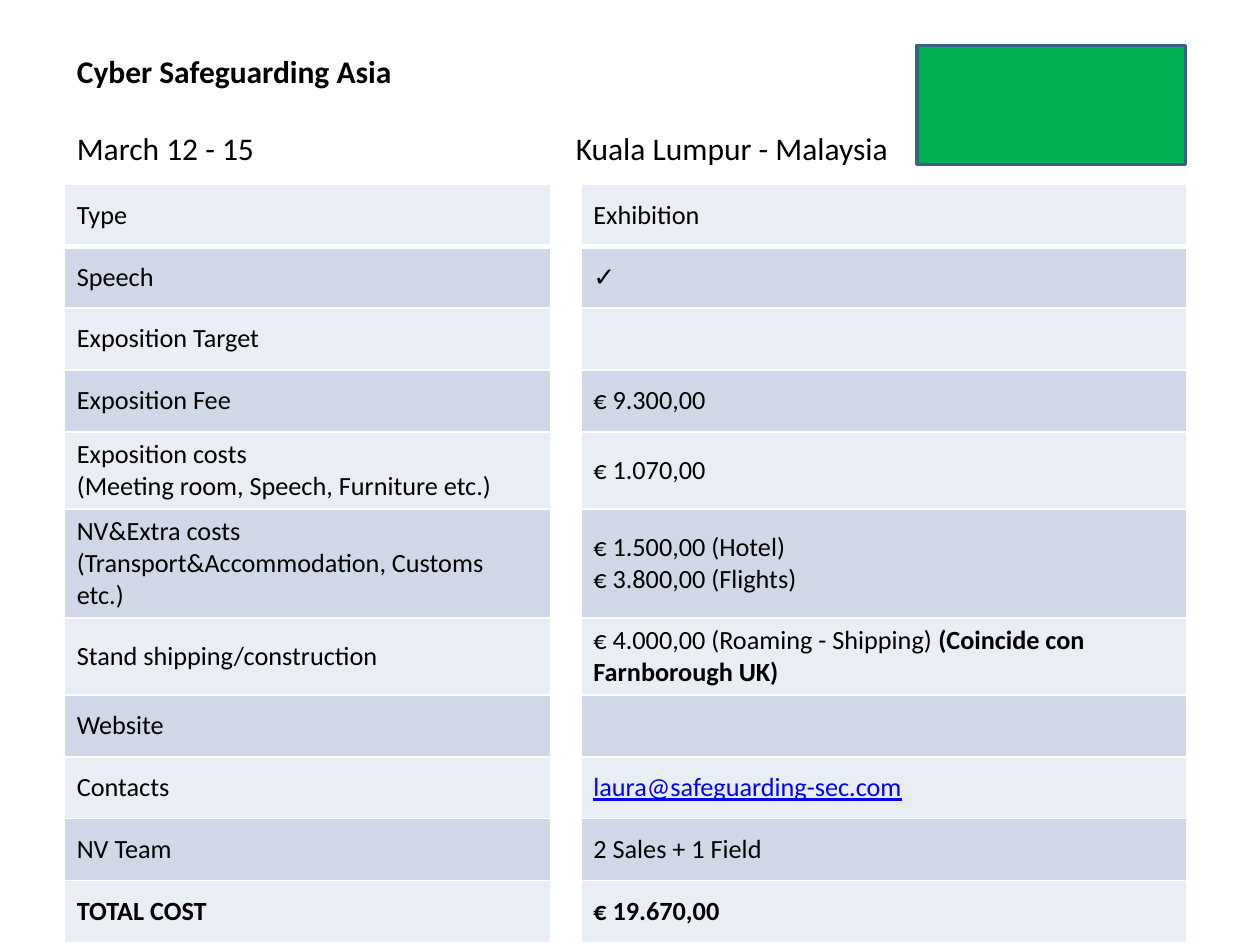
from lxml.etree import SubElement
from pptx import Presentation
from pptx.dml.color import RGBColor as Rgb
from pptx.enum.shapes import MSO_SHAPE as Shape
from pptx.enum.text import MSO_ANCHOR as Anchor, MSO_AUTO_SIZE as AutoSize, PP_ALIGN as Align
from pptx.oxml.ns import qn
from pptx.util import Inches, Pt

COLORS = {"text": "000000", "link": "0000FF", "gap": "FFFFFF", "light": "E9EDF4",
          "dark": "D0D8E8", "status": "00B050", "outline": "3A5F8C"}
BUDGET = [
    ("Type", "Exhibition"),
    ("Speech", "✓"),
    ("Exposition Target", ""),
    ("Exposition Fee", "€ 9.300,00"),
    ("Exposition costs\n(Meeting room, Speech, Furniture etc.)", "€ 1.070,00"),
    ("NV&Extra costs\n(Transport&Accommodation, Customs etc.)",
     "€ 1.500,00 (Hotel)\n€ 3.800,00 (Flights)"),
    ("Stand shipping/construction", "€ 4.000,00 (Roaming - Shipping) "),
    ("Website", ""),
    ("Contacts", "laura@safeguarding-sec.com"),
    ("NV Team", "2 Sales + 1 Field"),
    ("TOTAL COST", "€ 19.670,00"),
]


class EventSlide:
    """Holds the style and the current slide, placing elements by shares of its size."""

    def __init__(self, deck, font="Calibri"):
        self.deck, self.font = deck, font
        self.slide = deck.slides.add_slide(deck.slide_layouts[5])

    def place(self, left, top, width, height):
        across, down = self.deck.slide_width, self.deck.slide_height
        return int(left * across), int(top * down), int(width * across), int(height * down)

    def style(self, run, size, bold=False, color="text", font=None):
        run.font.name, run.font.size, run.font.bold = font or self.font, Pt(size), bold
        run.font.color.rgb = Rgb.from_string(COLORS[color])

    def heading(self, box, event, dates, city, city_tab):
        title = self.slide.shapes.title
        title.left, title.top, title.width, title.height = self.place(*box)
        frame = title.text_frame
        frame.auto_size, frame.vertical_anchor = AutoSize.NONE, Anchor.BOTTOM
        frame.text = f"{event}\n{dates}\t{city}"
        for paragraph in frame.paragraphs:
            paragraph.alignment = Align.LEFT
            for run in paragraph.runs:
                self.style(run, 18, bold=run.text == event)
        when_where = frame.paragraphs[1]
        when_where.space_before = Pt(22)
        tabs = SubElement(when_where._p.get_or_add_pPr(), qn("a:tabLst"))
        SubElement(tabs, qn("a:tab"), pos=str(Inches(city_tab)), algn="l")

    def status(self, box):
        block = self.slide.shapes.add_shape(Shape.RECTANGLE, *self.place(*box))
        block.shadow.inherit = False
        block.fill.solid()
        block.fill.fore_color.rgb = Rgb.from_string(COLORS["status"])
        block.line.color.rgb = Rgb.from_string(COLORS["outline"])
        block.line.width = Pt(2)

    def borders(self, cell, top, bottom):
        properties = cell._tc.get_or_add_tcPr()
        sides = (("lnL", 1), ("lnR", 1), ("lnT", top), ("lnB", bottom))
        for position, (side, points) in enumerate(sides):
            line = SubElement(properties, qn(f"a:{side}"), w=str(Pt(points)))
            fill = SubElement(line, qn("a:solidFill"))
            SubElement(fill, qn("a:srgbClr"), val=COLORS["gap"])
            properties.insert(position, line)

    def entry(self, cell, text, fill, bold):
        cell.fill.solid()
        cell.fill.fore_color.rgb = Rgb.from_string(COLORS[fill])
        cell.vertical_anchor = Anchor.MIDDLE
        cell.text_frame.text = text
        for paragraph in cell.text_frame.paragraphs:
            for run in paragraph.runs:
                is_link = "@" in text
                self.style(run, 15, bold, "link" if is_link else "text",
                           "Arial" if text == "✓" else None)
                run.font.underline = is_link

    def budget(self, box, rows, widths):
        table = self.slide.shapes.add_table(len(rows), len(widths), *self.place(*box)).table
        table.first_row = table.horz_banding = False
        for column, width in zip(table.columns, widths):
            column.width = Inches(width)
        for index, (label, value) in enumerate(rows):
            band = "dark" if index % 2 else "light"
            bold = index == len(rows) - 1
            for column, (text, fill) in enumerate(((label, band), ("", "gap"), (value, band))):
                cell = table.cell(index, column)
                self.entry(cell, text, fill, bold)
                self.borders(cell, 3 if index == 1 else 1, 3 if index == 0 else 1)
            table.cell(index, 0).margin_right = Inches(0.2)
        return table

    def remark(self, cell, text):
        run = cell.text_frame.paragraphs[0].add_run()
        run.text = text
        self.style(run, 15, bold=True)


def main():
    deck = Presentation()
    deck.slide_width, deck.slide_height = Inches(10), Inches(7.5)
    event = EventSlide(deck)
    event.heading((0.051, 0.016, 0.669, 0.167), "Cyber Safeguarding Asia",
                  "March 12 - 15", "Kuala Lumpur - Malaysia", 3.96)
    costs = event.budget((0.051, 0.195, 0.891, 0.721), BUDGET, (3.86, 0.24, 4.81))
    event.remark(costs.cell(6, 2), "(Coincide con Farnborough UK)")
    event.status((0.728, 0.048, 0.213, 0.126))
    deck.save("out.pptx")


if __name__ == "__main__":
    main()
